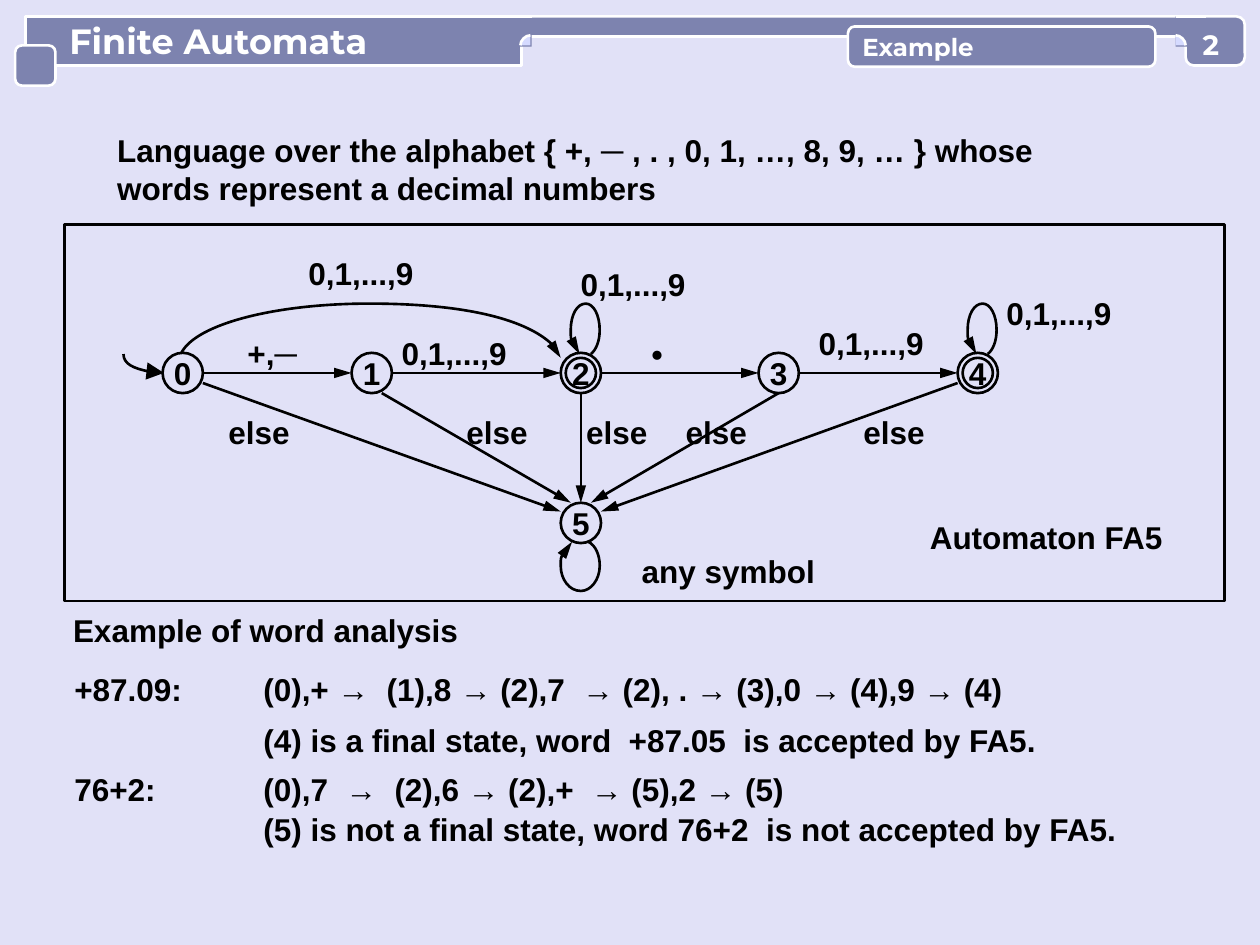
"""Build the slide on automaton FA5, which accepts decimal numbers."""
from copy import deepcopy
from dataclasses import dataclass
from itertools import pairwise

from lxml.etree import SubElement
from pptx import Presentation
from pptx.dml.color import RGBColor
from pptx.enum.shapes import MSO_CONNECTOR, MSO_SHAPE
from pptx.enum.text import MSO_ANCHOR, MSO_AUTO_SIZE, PP_ALIGN
from pptx.oxml.ns import qn
from pptx.util import Inches, Pt


@dataclass(frozen=True)
class Theme:
    ink: RGBColor = RGBColor.from_string("000000")
    white: RGBColor = RGBColor.from_string("FFFFFF")
    bar: RGBColor = RGBColor.from_string("7D83AF")
    corner: RGBColor = RGBColor.from_string("D5DAFF")
    paper: RGBColor = RGBColor.from_string("E1E1F7")
    body_font: str = "Arial"
    dot_font: str = "Times New Roman"
    header_font: str = "Montserrat"
    body: Pt = Pt(18)
    dot: Pt = Pt(32)
    title: Pt = Pt(20)
    tag: Pt = Pt(14)
    page: Pt = Pt(16)
    stroke: Pt = Pt(1.5)


theme = Theme()


def write(holder, text, size=theme.body, font=theme.body_font, color=theme.ink,
          align=PP_ALIGN.LEFT, anchor=MSO_ANCHOR.TOP, wrap=True, inset=0):
    frame = holder.text_frame
    frame_format = {"margin_left": Inches(inset), "margin_right": 0, "margin_top": 0,
                    "margin_bottom": 0, "auto_size": MSO_AUTO_SIZE.NONE,
                    "vertical_anchor": anchor, "word_wrap": wrap}
    for name, value in frame_format.items():
        setattr(frame, name, value)
    paragraph = frame.paragraphs[0]
    paragraph.alignment = align
    for part in filter(None, text.partition("─")):
        run = paragraph.add_run()
        run.text = part
        run_format = {"name": font, "size": size, "bold": True, "italic": part == "─"}
        for name, value in run_format.items():
            setattr(run.font, name, value)
        run.font.color.rgb = color


def curve(start, segments, color=theme.ink, fill=None):
    builder = shapes.build_freeform(Inches(start[0]), Inches(start[1]))
    builder.add_line_segments([(Inches(x), Inches(y)) for segment in segments for x, y in segment],
                              close=False)
    outline = builder.convert_to_shape()
    outline.shadow.inherit = False
    outline.fill.background()
    outline.line.color.rgb = color
    outline.line.width = theme.stroke
    stroke_path = next(outline.element.iter(qn("a:path")))
    corners = stroke_path.findall(qn("a:lnTo"))
    for first in range(0, len(corners), 3):
        bezier = SubElement(stroke_path, qn("a:cubicBezTo"))
        for corner in corners[first:first + 3]:
            bezier.append(corner[0])
            stroke_path.remove(corner)
    if fill:
        outline.fill.solid()
        outline.fill.fore_color.rgb = fill
        wedge = deepcopy(stroke_path)
        wedge.set("stroke", "0")
        SubElement(SubElement(wedge, qn("a:lnTo")), qn("a:pt"),
                   x=wedge[0][0].get("x"), y=wedge[1][2].get("y"))
        SubElement(wedge, qn("a:close"))
        stroke_path.addprevious(wedge)
    stroke_path.set("fill", "none")
    return outline


deck = Presentation()
deck.slide_width, deck.slide_height = Inches(10), Inches(7.5)
slide = deck.slides.add_slide(deck.slide_layouts[5])
shapes = slide.shapes
slide.background.fill.solid()
slide.background.fill.fore_color.rgb = theme.paper

radius, row, sink_y = 0.16, 2.96, 4.15
centers = [1.45, 2.95, 4.61, 6.18, 7.76]
sink_x = centers[2]
states = [(x, row) for x in centers] + [(sink_x, sink_y)]
final_states = {2, 4}

for state, (x, y) in enumerate(states):
    rings = [radius, 0.12] if state in final_states else [radius]
    for ring in rings:
        circle = shapes.add_shape(MSO_SHAPE.OVAL, Inches(x - ring), Inches(y - ring),
                                  Inches(2 * ring), Inches(2 * ring))
        circle.shadow.inherit = False
        circle.fill.background()
        circle.line.color.rgb = theme.ink
        circle.line.width = theme.stroke
    write(circle, str(state), align=PP_ALIGN.CENTER, anchor=MSO_ANCHOR.MIDDLE, wrap=False)

edges = [(left + radius, row, right - radius, row) for left, right in pairwise(centers)]
else_offsets = [(radius, 0.08, -radius, -0.09), (0.08, radius, -0.08, -radius),
                (0, radius, 0, -radius), (0, radius, 0.08, -radius),
                (-radius, 0.08, radius, -0.09)]
edges += [(x + from_x, row + from_y, sink_x + to_x, sink_y + to_y)
          for x, (from_x, from_y, to_x, to_y) in zip(centers, else_offsets)]
arrows = []
for edge in edges:
    transition = shapes.add_connector(MSO_CONNECTOR.STRAIGHT, *map(Inches, edge))
    transition.line.color.rgb = theme.ink
    transition.line.width = theme.stroke
    SubElement(transition.element.spPr, qn("a:effectLst"))
    arrows.append((transition, "med"))

for x in (centers[state] for state in sorted(final_states)):
    digit_loop = curve((x + 0.08, 2.81), [
        ((x + 0.12, 2.78), (x + 0.15, 2.71), (x + 0.15, 2.62)),
        ((x + 0.15, 2.5), (x + 0.1, 2.41), (x + 0.04, 2.41)),
        ((x - 0.03, 2.41), (x - 0.08, 2.5), (x - 0.08, 2.62)),
        ((x - 0.08, 2.7), (x - 0.06, 2.78), (x - 0.01, 2.81))])
    arrows.append((digit_loop, "med"))
sink_loop = curve((4.67, 4.3), [
    ((4.73, 4.33), (4.76, 4.41), (4.76, 4.49)), ((4.76, 4.6), (4.69, 4.69), (4.61, 4.69)),
    ((4.52, 4.69), (4.45, 4.6), (4.45, 4.49)), ((4.45, 4.41), (4.48, 4.34), (4.54, 4.3))])
unsigned_jump = curve((1.44, 2.8), [
    ((1.56, 2.57), (2.19, 2.41), (2.93, 2.41)), ((3.73, 2.41), (4.39, 2.6), (4.45, 2.84))])
entry = curve((0.98, 2.81), [((0.98, 2.89), (1.13, 2.96), (1.3, 2.96))])
arrows += [(sink_loop, "med"), (unsigned_jump, "med"), (entry, "lg")]
for arrow, width in arrows:
    SubElement(arrow.element.spPr.find(qn("a:ln")), qn("a:tailEnd"),
               type="triangle", w=width, len="lg")

digits = "0,1,...,9"
edge_labels = [(digits, 2.45, 2.02, 0.83), (digits, 3.19, 2.65, 0.83),
               (digits, 6.5, 2.57, 0.83), (digits, 7.99, 2.33, 0.83),
               (digits, 4.61, 2.1, 0.83), ("+,─", 1.96, 2.65, 0.4),
               ("any symbol", 5.09, 4.38, 1.38)]
edge_labels += [("else", left, 3.28, 0.49) for left in (1.81, 3.7, 4.65, 5.44, 6.85)]
for text, left, top, width in edge_labels:
    label = shapes.add_textbox(Inches(left), Inches(top), Inches(width), Inches(0.3))
    write(label, text, align=PP_ALIGN.CENTER, wrap=False)
point = shapes.add_textbox(Inches(5.16), Inches(2.41), Inches(0.11), Inches(0.53))
write(point, ".", theme.dot, theme.dot_font, align=PP_ALIGN.CENTER, wrap=False)

word_left, run_left = 0.59, 2.09
statements = [
    ("Language over the alphabet { +, ─ , . , 0, 1, …, 8, 9, … } whose "
     "words represent a decimal numbers", 0.93, 1.04, 7.91, 0.61),
    ("Automaton FA5", 7.38, 4.11, 1.93, 0.3),
    ("Example of word analysis", 0.58, 4.85, 5.2, 0.3),
    ("+87.09:", word_left, 5.32, 0.94, 0.3),
    ("(0),+ →  (1),8 → (2),7  → (2), . → (3),0 → (4),9 → (4)", run_left, 5.32, 6.54, 0.3),
    ("(4) is a final state, word  +87.05  is accepted by FA5.", run_left, 5.72, 7.02, 0.3),
    ("76+2:", word_left, 6.11, 0.94, 0.3),
    ("(0),7  →  (2),6 → (2),+  → (5),2 → (5)", run_left, 6.11, 4.65, 0.3),
    ("(5) is not a final state, word 76+2  is not accepted by FA5.", run_left, 6.43, 7.02, 0.3)]
for text, *box in statements:
    write(shapes.add_textbox(*map(Inches, box)), text)

diagram_border = shapes.add_shape(MSO_SHAPE.RECTANGLE, Inches(0.51), Inches(1.78),
                                  Inches(9.21), Inches(2.99))
diagram_border.shadow.inherit = False
diagram_border.fill.background()
diagram_border.line.color.rgb = theme.ink
diagram_border.line.width = theme.stroke

heading = shapes.title
heading_box = {"left": Inches(0.2), "top": Inches(0.13),
               "width": Inches(3.94), "height": Inches(0.39)}
for name, value in heading_box.items():
    setattr(heading, name, value)
rounded = SubElement(heading.element.spPr, qn("a:prstGeom"), prst="roundRect")
SubElement(SubElement(rounded, qn("a:avLst")), qn("a:gd"), name="adj", fmla="val 19000")
shapes.element.append(heading.element)

tabs = [heading]
for *box, rounding in [(4.06, 0.13, 5.43, 0.16, 0.5), (0.12, 0.36, 0.32, 0.32, 0.17),
                       (9.41, 0.13, 0.47, 0.39, 0.17), (6.73, 0.21, 2.44, 0.32, 0.17)]:
    tab = shapes.add_shape(MSO_SHAPE.ROUNDED_RECTANGLE, *map(Inches, box))
    tab.adjustments[0] = rounding
    tab.shadow.inherit = False
    tabs.append(tab)
for tab in tabs:
    tab.fill.solid()
    tab.fill.fore_color.rgb = theme.bar
    tab.line.color.rgb = theme.white
    tab.line.width = theme.stroke

for left, arc_from, arc_to in [(3.98, 4.21, 4.13), (9.33, 9.33, 9.41)]:
    joint = shapes.add_shape(MSO_SHAPE.RECTANGLE, *map(Inches, (left, 0.13, 0.24, 0.24)))
    joint.shadow.inherit = False
    joint.fill.solid()
    joint.fill.fore_color.rgb = theme.bar
    joint.line.fill.background()
    top_edge = shapes.add_connector(MSO_CONNECTOR.STRAIGHT,
                                    *map(Inches, (left, 0.13, left + 0.24, 0.13)))
    top_edge.line.color.rgb = theme.white
    top_edge.line.width = theme.stroke
    SubElement(top_edge.element.spPr, qn("a:effectLst"))
    bend = ((arc_from + arc_to) / 2, 0.28), (arc_to, 0.32), (arc_to, 0.36)
    curve((arc_from, 0.28), [bend], theme.white, theme.corner)

header = {"font": theme.header_font, "color": theme.white, "anchor": MSO_ANCHOR.MIDDLE}
write(heading, "Finite Automata", theme.title, inset=0.35, **header)
write(tabs[-1], "Example", theme.tag, inset=0.1, **header)
page = shapes.add_textbox(Inches(9.41), Inches(0.22), Inches(0.4), Inches(0.27))
write(page, "2", theme.page, align=PP_ALIGN.CENTER, **header)

deck.save("out.pptx")
